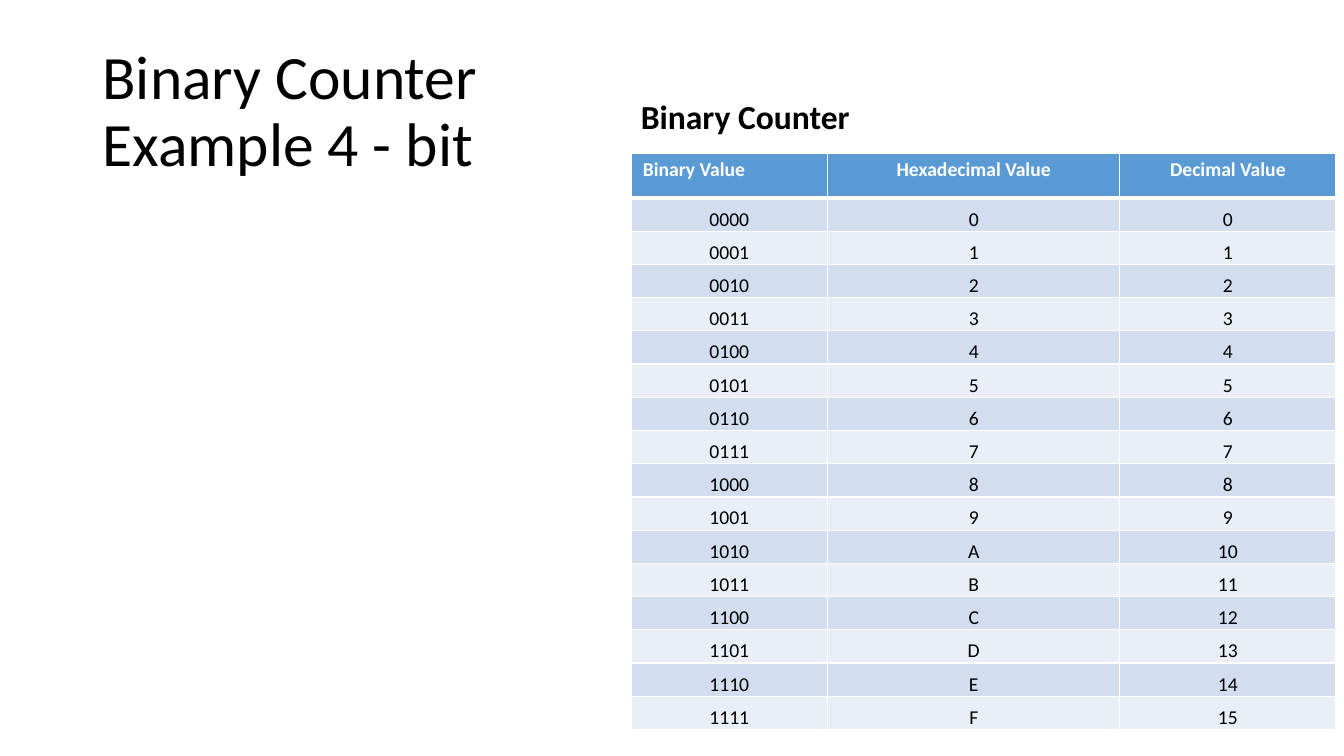
from lxml.etree import SubElement as Sub
from pptx import Presentation
from pptx.dml.color import RGBColor
from pptx.enum.text import MSO_ANCHOR as Anchor, MSO_AUTO_SIZE as Fit, PP_ALIGN as Align
from pptx.oxml.ns import qn
from pptx.util import Cm, Pt

BLACK = RGBColor(0x00, 0x00, 0x00)
WHITE = RGBColor(0xFF, 0xFF, 0xFF)
BLUE = RGBColor(0x5B, 0x9B, 0xD5)
LIGHT = RGBColor(0xD2, 0xDE, 0xEF)
PALE = RGBColor(0xEA, 0xEF, 0xF7)


class Deck:
    font = "Calibri"

    def __init__(self):
        self.file = Presentation()
        self.file.slide_width, self.file.slide_height = Cm(33.87), Cm(19.05)
        self.slide = self.file.slides.add_slide(self.file.slide_layouts[5])

    def run(self, para, text, size, color=BLACK, bold=False):
        run = para.add_run()
        run.text = text
        font = run.font
        font.name, font.size, font.bold = self.font, Pt(size), bold
        font.color.rgb = color

    def frame(self, shape, box, anchor):
        shape.left, shape.top, shape.width, shape.height = map(Cm, box)
        frame = shape.text_frame
        frame.word_wrap, frame.auto_size = True, Fit.NONE
        frame.vertical_anchor = anchor
        para = frame.paragraphs[0]
        para.alignment, para.line_spacing = Align.LEFT, 0.9
        return para

    def title(self, lines, box):
        para = self.frame(self.slide.shapes.title, box, Anchor.MIDDLE)
        for i, line in enumerate(lines):
            if i:
                para.add_line_break()
            self.run(para, line, 44)

    def label(self, text, box):
        shape = self.slide.shapes.add_textbox(*map(Cm, box))
        para = self.frame(shape, box, Anchor.BOTTOM)
        para.space_before = Pt(10)
        self.run(para, text, 24, bold=True)

    def border(self, cell, side, width):
        props = cell._tc.get_or_add_tcPr()
        line = Sub(props, qn(f"a:ln{side}"), w=str(Pt(width)))
        fill = Sub(line, qn("a:solidFill"))
        Sub(fill, qn("a:srgbClr"), val=str(WHITE))

    def cell(self, cell, text, fill, align, head):
        for side in "LRTB":
            self.border(cell, side, 3 if head and side == "B" else 1)
        cell.fill.solid()
        cell.fill.fore_color.rgb = fill
        pads = (0.3, 0.13, 0.3, 0.13) if head else (0.02, 0.02, 0.02, 0)
        (cell.margin_left, cell.margin_top,
         cell.margin_right, cell.margin_bottom) = map(Cm, pads)
        cell.vertical_anchor = Anchor.TOP if head else Anchor.BOTTOM
        para = cell.text_frame.paragraphs[0]
        para.alignment = align
        self.run(para, text, 14, WHITE if head else BLACK, head)

    def table(self, rows, left, top, widths, first, rest):
        high = first + rest * (len(rows) - 1)
        grid = self.slide.shapes.add_table(
            len(rows), len(widths), Cm(left), Cm(top), Cm(sum(widths)), Cm(high)).table
        grid.first_row = grid.horz_banding = False
        for col, width in zip(grid.columns, widths):
            col.width = Cm(width)
        for r, row in enumerate(rows):
            grid.rows[r].height = Cm(rest if r else first)
            fill = (LIGHT if r % 2 else PALE) if r else BLUE
            for c, text in enumerate(row):
                align = Align.CENTER if r or c else Align.LEFT
                self.cell(grid.cell(r, c), text, fill, align, r == 0)


def main():
    deck = Deck()
    deck.title(["Binary Counter ", "Example 4 - bit"], (2.33, 1.01, 29.21, 3.68))
    rows = [("Binary Value", "Hexadecimal Value", "Decimal Value")]
    rows += [(f"{n:04b}", f"{n:X}", str(n)) for n in range(16)]
    deck.table(rows, 15.9, 3.86, (4.96, 7.36, 5.45), 1.13, 13.4 / 16)
    deck.label("Binary Counter", (15.9, 1.27, 14.4, 2.29))
    deck.file.save("out.pptx")


if __name__ == "__main__":
    main()
